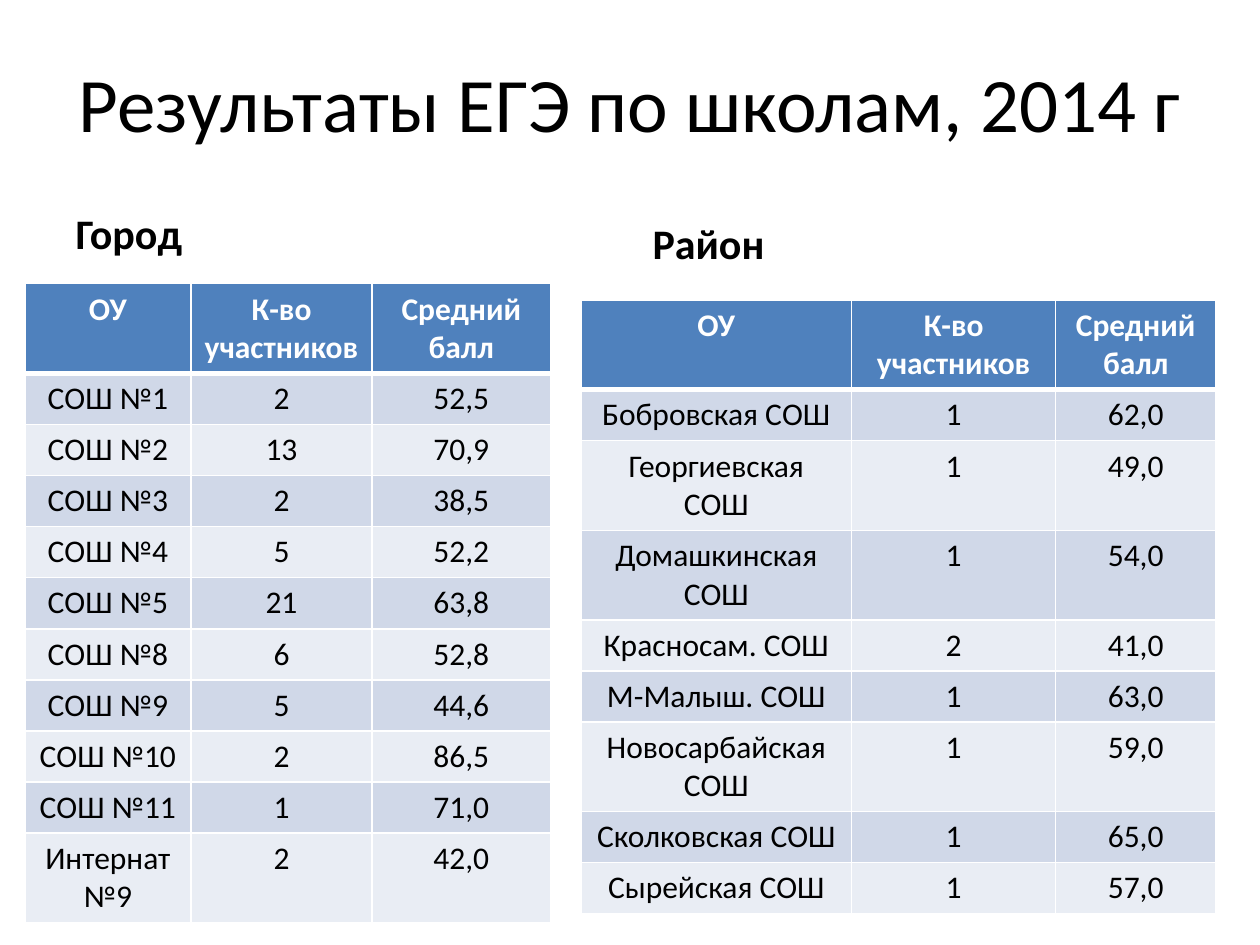
from dataclasses import dataclass

from lxml import etree
from pptx import Presentation
from pptx.dml.color import RGBColor
from pptx.enum.text import MSO_ANCHOR, PP_ALIGN
from pptx.oxml.ns import qn
from pptx.util import Cm, Pt

LEFT, CENTER = PP_ALIGN.LEFT, PP_ALIGN.CENTER
MIDDLE, BOTTOM = MSO_ANCHOR.MIDDLE, MSO_ANCHOR.BOTTOM


@dataclass(frozen=True)
class Theme:
    font: str = "Calibri"
    title: int = 44
    label: int = 24
    cell: int = 18
    ink: str = "000000"
    paper: str = "FFFFFF"
    head: str = "4F81BD"
    bands: tuple = ("D0D8E8", "E9EDF4")
    thin: int = 1
    thick: int = 3


THEME = Theme()
ROW = 1.03
HEADS = ("ОУ", "К-во участников", "Средний балл")
CITY = (
    ("СОШ №1", "2", "52,5"),
    ("СОШ №2", "13", "70,9"),
    ("СОШ №3", "2", "38,5"),
    ("СОШ №4", "5", "52,2"),
    ("СОШ №5", "21", "63,8"),
    ("СОШ №8", "6", "52,8"),
    ("СОШ №9", "5", "44,6"),
    ("СОШ №10", "2", "86,5"),
    ("СОШ №11", "1", "71,0"),
    ("Интернат №9", "2", "42,0"),
)
RURAL = (
    ("Бобровская СОШ", "1", "62,0"),
    ("Георгиевская СОШ", "1", "49,0"),
    ("Домашкинская СОШ", "1", "54,0"),
    ("Красносам. СОШ", "2", "41,0"),
    ("М-Малыш. СОШ", "1", "63,0"),
    ("Новосарбайская СОШ", "1", "59,0"),
    ("Сколковская СОШ", "1", "65,0"),
    ("Сырейская СОШ", "1", "57,0"),
)


def write(frame, text, size, color, bold=False, align=CENTER):
    para = frame.paragraphs[0]
    para.alignment = align
    run = para.add_run()
    run.text = text
    font = run.font
    font.name = THEME.font
    font.size = Pt(size)
    font.bold = bold
    font.color.rgb = RGBColor.from_string(color)


def place(shape, box, anchor):
    shape.left, shape.top, shape.width, shape.height = map(Cm, box)
    shape.text_frame.vertical_anchor = anchor


def edge(cell, side, width):
    props = cell._tc.get_or_add_tcPr()
    line = etree.SubElement(props, qn(f"a:ln{side}"), w=str(Pt(width)))
    fill = etree.SubElement(line, qn("a:solidFill"))
    etree.SubElement(fill, qn("a:srgbClr"), val=THEME.paper)


def draw_title(slide, box, text):
    shape = slide.shapes.title
    place(shape, box, MIDDLE)
    write(shape.text_frame, text, THEME.title, THEME.ink)


def draw_label(shape, box, text):
    place(shape, box, BOTTOM)
    write(shape.text_frame, text, THEME.label, THEME.ink, True, LEFT)


def draw_cell(cell, text, row):
    head = row == 0
    for side in "LRTB":
        wide = (head and side == "B") or (row == 1 and side == "T")
        edge(cell, side, THEME.thick if wide else THEME.thin)
    cell.fill.solid()
    fill = THEME.head if head else THEME.bands[(row - 1) % 2]
    cell.fill.fore_color.rgb = RGBColor.from_string(fill)
    color = THEME.paper if head else THEME.ink
    write(cell.text_frame, text, THEME.cell, color, head)


def draw_table(slide, left, top, widths, data):
    rows = (HEADS, *data)
    table = slide.shapes.add_table(
        len(rows), len(widths), Cm(left), Cm(top),
        Cm(sum(widths)), Cm(ROW * len(rows)),
    ).table
    for col, width in zip(table.columns, widths):
        col.width = Cm(width)
    for r, row in enumerate(rows):
        table.rows[r].height = Cm(ROW)
        for c, text in enumerate(row):
            draw_cell(table.cell(r, c), text, r)


def draw_group(slide, box, label, name, shift, widths, data):
    left, top, _, height = box
    draw_label(label, box, name)
    draw_table(slide, left + shift[0], top + height + shift[1], widths, data)


def main():
    deck = Presentation()
    deck.slide_width, deck.slide_height = Cm(25.4), Cm(19.05)
    slide = deck.slides.add_slide(deck.slide_layouts[4])
    marks = {p.placeholder_format.idx: p for p in slide.placeholders}
    for idx in (2, 4):
        item = marks[idx].element
        item.getparent().remove(item)
    draw_title(slide, (1.27, 0.76, 22.86, 2.57), "Результаты ЕГЭ по школам, 2014 г")
    draw_group(slide, (1.27, 3.53, 11.23, 1.8), marks[1], "Город",
               (-0.77, 0.39), (3.35, 3.65, 3.6), CITY)
    draw_group(slide, (12.9, 3.53, 11.23, 2), marks[3], "Район",
               (-1.19, 0.52), (5.46, 4.11, 3.23), RURAL)
    deck.save("out.pptx")


if __name__ == "__main__":
    main()
